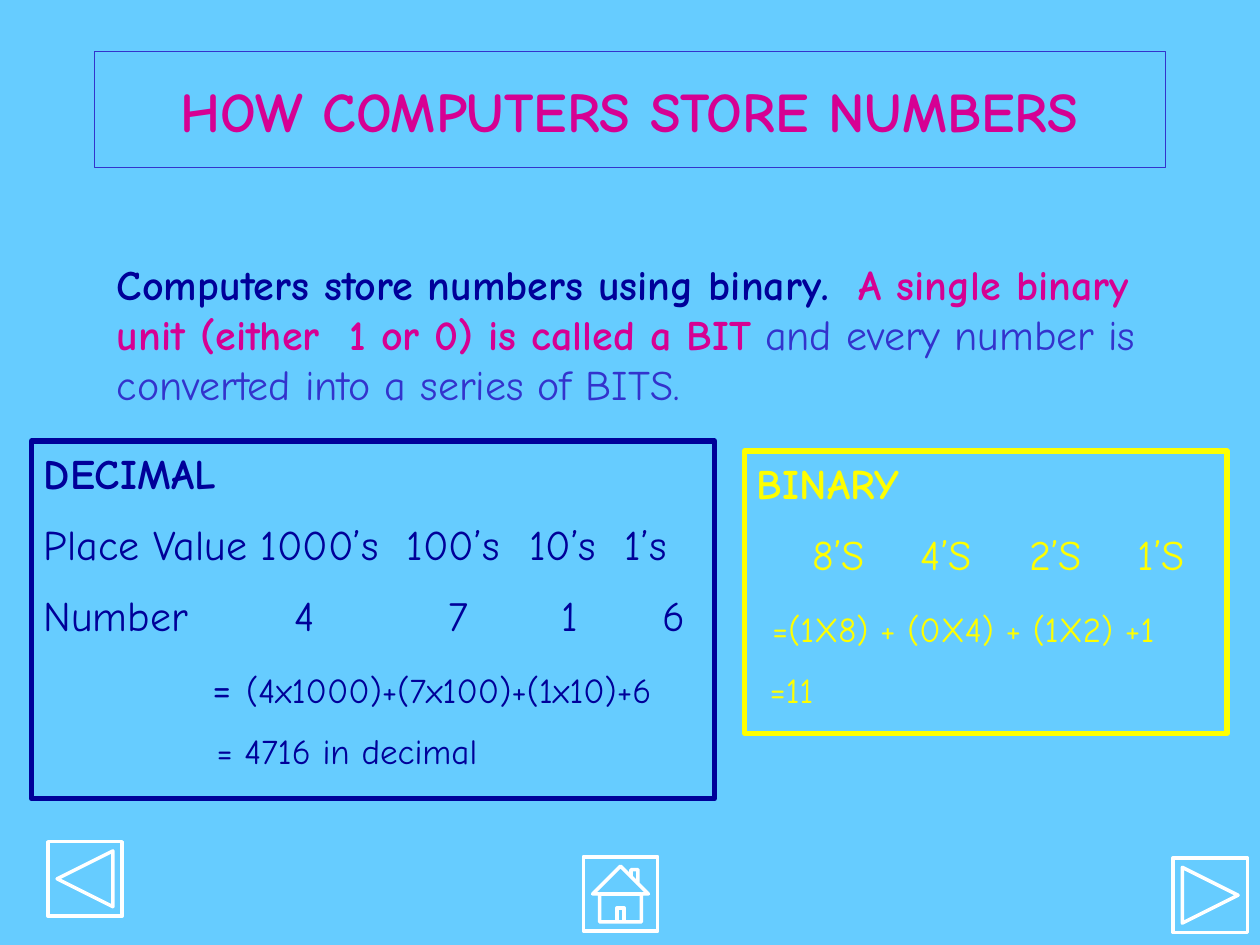
from pptx import Presentation
from pptx.dml.color import RGBColor
from pptx.enum.shapes import MSO_SHAPE as Shape
from pptx.enum.text import MSO_ANCHOR as Anchor, PP_ALIGN as Align
from pptx.oxml.ns import qn
from pptx.util import Inches, Pt
from lxml.etree import SubElement

SKY = RGBColor(0x66, 0xCC, 0xFF)
INDIGO = RGBColor(0x33, 0x33, 0xCC)
NAVY = RGBColor(0x00, 0x00, 0x99)
PINK = RGBColor(0xD6, 0x00, 0x93)
YELLOW = RGBColor(0xFF, 0xFF, 0x00)
WHITE = RGBColor(0xFF, 0xFF, 0xFF)
FONT = "Comic Neue"


def set_font(font, size, color, bold=False):
    """Apply the slide typeface with a size, colour and weight."""
    font.name = FONT
    font.size = Pt(size)
    font.bold = bold
    font.color.rgb = color


def add_outline(slide, preset, box, color, weight):
    """Add an unfilled preset shape with a coloured outline."""
    outline = slide.shapes.add_shape(preset, *map(Inches, box))
    outline.shadow.inherit = False
    outline.fill.background()
    outline.line.color.rgb = color
    outline.line.width = Pt(weight)
    return outline


def set_stops(paragraph, stops):
    """Give a paragraph left-aligned tab stops, in inches."""
    tab_list = SubElement(paragraph._p.get_or_add_pPr(), qn("a:tabLst"))
    for stop in stops:
        SubElement(tab_list, qn("a:tab"), pos=str(Inches(stop)), algn="l")


def add_title(slide, box):
    """Place the framed slide heading."""
    frame = add_outline(slide, Shape.RECTANGLE, box, INDIGO, 0.75).text_frame
    frame.word_wrap = True
    frame.vertical_anchor = Anchor.MIDDLE
    heading = frame.paragraphs[0]
    heading.text = "HOW COMPUTERS STORE NUMBERS"
    heading.alignment = Align.CENTER
    set_font(heading.font, 32, PINK, True)


def add_introduction(slide, box):
    """Place the paragraph that defines a bit."""
    frame = slide.shapes.add_textbox(*map(Inches, box)).text_frame
    frame.word_wrap = True
    introduction = frame.paragraphs[0]
    for words, color, bold in (
        ("Computers store numbers using binary.  ", NAVY, True),
        ("A single binary unit (either  1 or 0) is called a BIT", PINK, True),
        (" and every number is converted into a series of BITS.", INDIGO, False),
    ):
        run = introduction.add_run()
        run.text = words
        set_font(run.font, 24, color, bold)


def add_number_panel(slide, box, color, heading, rows):
    """Place a framed number system: a bold heading above its working rows."""
    frame = add_outline(slide, Shape.RECTANGLE, box, color, 3).text_frame
    frame.word_wrap = True
    frame.vertical_anchor = Anchor.TOP
    title = frame.paragraphs[0]
    title.text = heading
    title.alignment = Align.LEFT
    set_font(title.font, 24, color, True)
    for parts, gap, stops in rows:
        row = frame.add_paragraph()
        set_stops(row, stops)
        row.alignment = Align.LEFT
        row.space_before = Pt(gap)
        for words, size in parts:
            run = row.add_run()
            run.text = words
            set_font(run.font, size, color)


def add_navigation(slide, buttons, size):
    """Place the square navigation buttons at their left and top corners."""
    for preset, left, top in buttons:
        add_outline(slide, preset, (left, top, size, size), WHITE, 2)


def main():
    """Build and save the slide."""
    deck = Presentation()
    deck.slide_width, deck.slide_height = Inches(10), Inches(7.5)
    slide = deck.slides.add_slide(deck.slide_layouts[6])
    slide.background.fill.solid()
    slide.background.fill.fore_color.rgb = SKY

    add_title(slide, (0.75, 0.41, 8.5, 0.92))
    add_introduction(slide, (0.83, 2, 8.58, 1.3))
    add_number_panel(slide, (0.25, 3.5, 5.42, 2.84), NAVY, "DECIMAL", (
        ([("Place Value\t1000’s\t100’s\t10’s\t1’s", 24)], 12, (1.72, 2.88, 3.85, 4.61)),
        ([("Number\t4\t7\t1\t6", 24)], 12, (1.99, 3.21, 4.11, 4.91)),
        ([("\t= ", 24), ("(4x1000)+(7x100)+(1x10)+6", 20)], 12, [1.34]),
        ([("\t= 4716 in decimal", 20)], 10, [1.37]),
    ))
    bit_stops = [0.44 + 0.86 * column for column in range(4)]
    add_number_panel(slide, (5.91, 3.58, 3.83, 2.24), YELLOW, "BINARY", (
        ([("\t8’S\t4’S\t2’S\t1’S", 24)], 12, bit_stops),
        ([("\t=(1X8) + (0X4) + (1X2) +1", 20)], 16, [0.12]),
        ([("\t=11", 20)], 11, [0.1]),
    ))
    add_navigation(slide, (
        (Shape.ACTION_BUTTON_HOME, 4.63, 6.8),
        (Shape.ACTION_BUTTON_FORWARD_OR_NEXT, 9.31, 6.81),
        (Shape.ACTION_BUTTON_BACK_OR_PREVIOUS, 0.38, 6.68),
    ), 0.59)
    deck.save("out.pptx")


if __name__ == "__main__":
    main()
